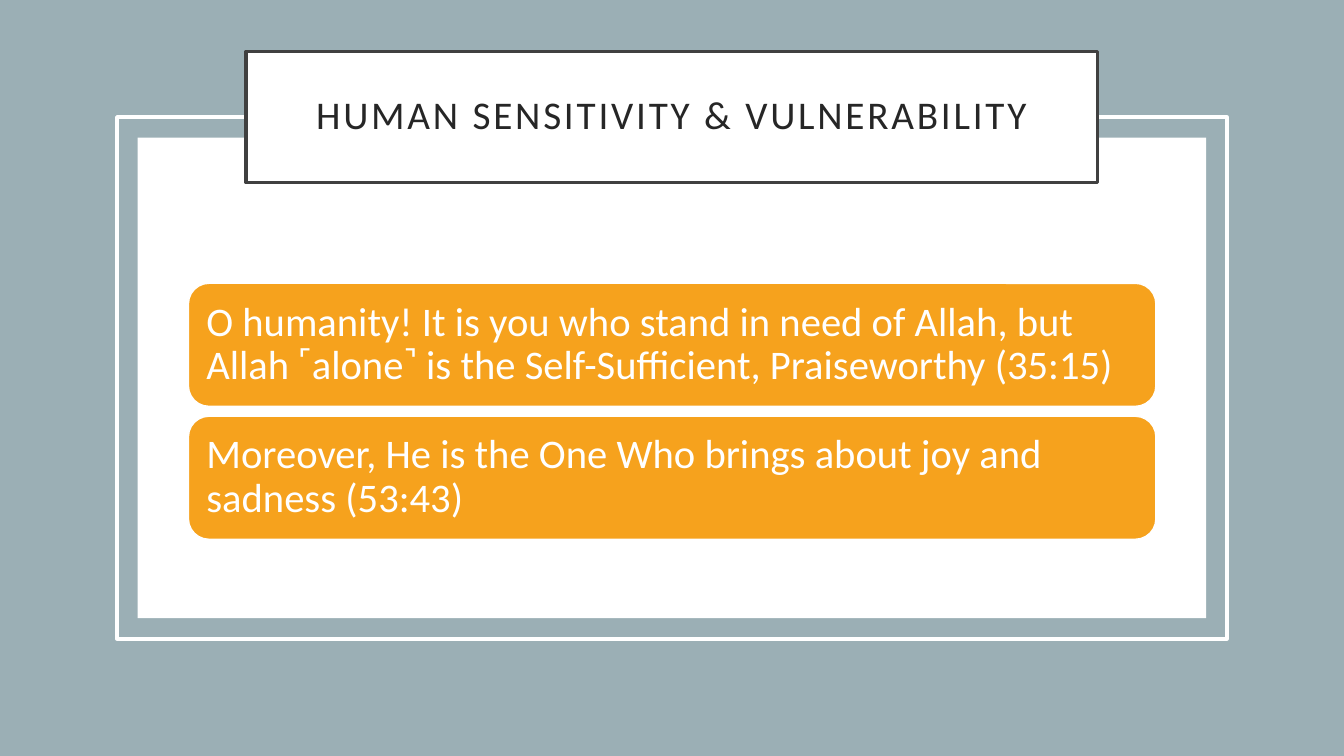
from dataclasses import dataclass

from pptx import Presentation
from pptx.dml.color import RGBColor
from pptx.enum import shapes, text
from pptx.util import Cm, Pt


@dataclass(frozen=True)
class Theme:
    """Colours, font and type sizes of the slide."""
    back: str = "9BAFB5"
    white: str = "FFFFFF"
    edge: str = "404040"
    ink: str = "262626"
    card: str = "F6A21D"
    font: str = "Calibri"
    head: int = 28
    body: int = 29


THEME = Theme()
KIND = shapes.MSO_SHAPE
ALIGN = text.PP_ALIGN
TITLE = "HUMAN SENSITIVITY & VULNERABILITY"
VERSES = [
    "O humanity! It is you who stand in need of Allah, but Allah ˹alone˺ "
    "is the Self-Sufficient, Praiseworthy (35:15)",
    "Moreover, He is the One Who brings about joy and sadness (53:43)",
]


def paint(fill, color):
    """Fill with a solid colour, or with nothing."""
    if color:
        fill.solid()
        fill.fore_color.rgb = RGBColor.from_string(color)
    else:
        fill.background()


def block(slide, box, fill=None, line=None, width=2.5, kind=KIND.RECTANGLE):
    """Add a flat shape in the box, given in centimetres."""
    shape = slide.shapes.add_shape(kind, *map(Cm, box))
    shape.shadow.inherit = False
    paint(shape.fill, fill)
    paint(shape.line.fill, line)
    if line:
        shape.line.width = Pt(width)
    return shape


def write(shape, words, size, color, align, inset):
    """Write one paragraph in the middle of a shape."""
    frame = shape.text_frame
    frame.word_wrap = True
    frame.vertical_anchor = text.MSO_ANCHOR.MIDDLE
    frame.margin_left = frame.margin_right = Cm(inset)
    frame.margin_top = frame.margin_bottom = Cm(inset)
    para = frame.paragraphs[0]
    para.alignment = align
    para.line_spacing = 0.9
    run = para.add_run()
    run.text = words
    run.font.name = THEME.font
    run.font.size = Pt(size)
    run.font.color.rgb = RGBColor.from_string(color)
    return run


def panel(slide, box):
    """Draw the white panel with its outer frame."""
    left, top, width, height = box
    gap = 0.52
    block(slide, box, THEME.white)
    block(slide, (left - gap, top - gap, width + 2 * gap, height + 2 * gap),
          line=THEME.white)


def title(slide, box, words):
    """Draw the title plate with spaced capitals."""
    plate = block(slide, box, THEME.white, THEME.edge)
    run = write(plate, words, THEME.head, THEME.ink, ALIGN.CENTER, 0.5)
    run.font._element.set("spc", "200")


def cards(slide, box, verses):
    """Stack one rounded card per verse, evenly spaced in the box."""
    left, top, width, height = box
    gap = 0.25
    tall = (height - gap * (len(verses) - 1)) / len(verses)
    for row, verse in enumerate(verses):
        card = block(slide, (left, top + row * (tall + gap), width, tall),
                     THEME.card, THEME.white, 1, KIND.ROUNDED_RECTANGLE)
        write(card, verse, THEME.body, THEME.white, ALIGN.LEFT, 0.3)


def main():
    """Build and save the slide."""
    deck = Presentation()
    deck.slide_width, deck.slide_height = Cm(33.87), Cm(19.05)
    slide = deck.slides.add_slide(deck.slide_layouts[6])
    paint(slide.background.fill, THEME.back)
    panel(slide, (3.47, 3.47, 26.93, 12.11))
    title(slide, (6.2, 1.3, 21.46, 3.3), TITLE)
    cards(slide, (4.75, 7.14, 24.38, 6.45), VERSES)
    deck.save("out.pptx")


if __name__ == "__main__":
    main()
